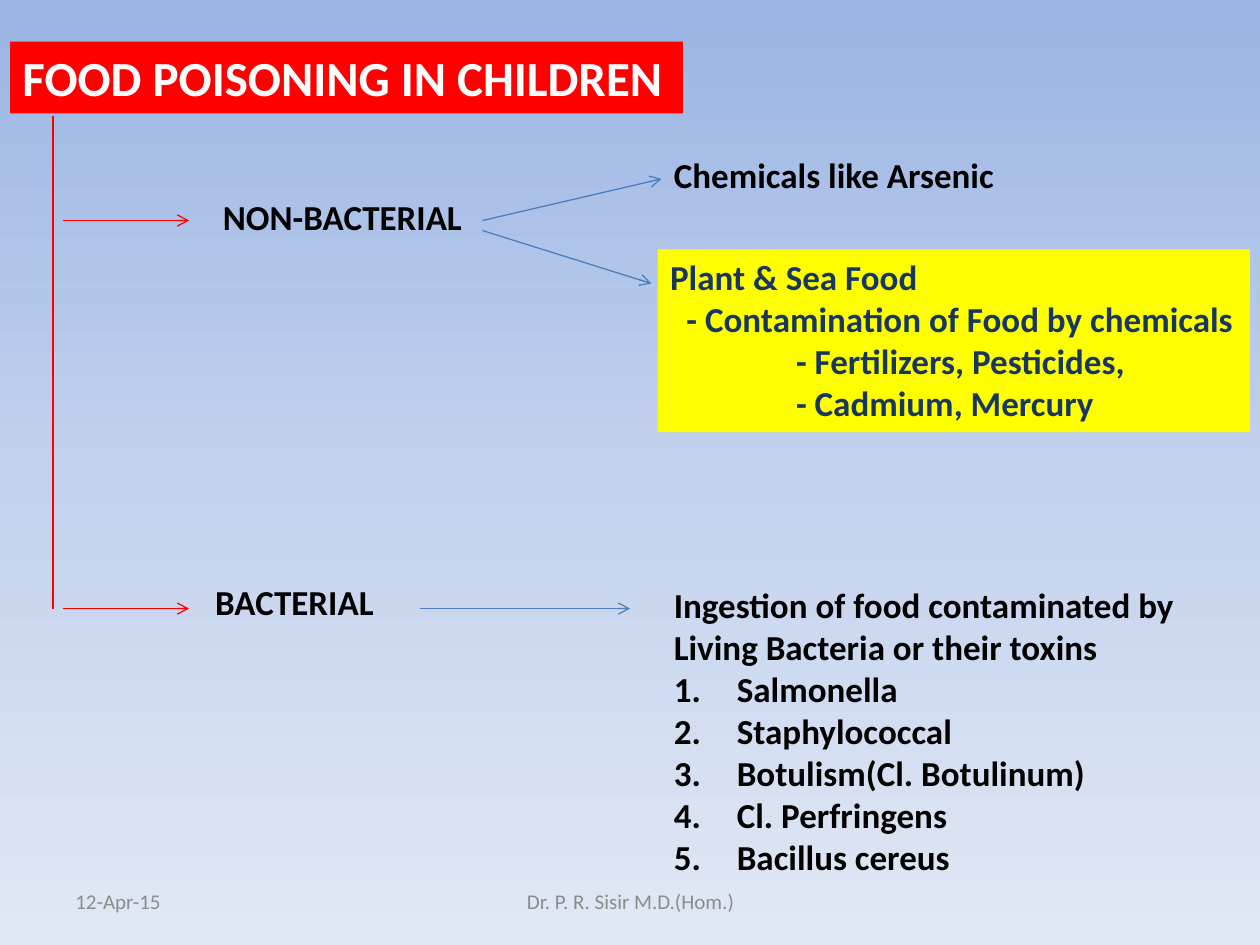
import copy

import pptx
import pptx.dml.color
import pptx.enum.shapes
import pptx.enum.text
import pptx.oxml.ns
import pptx.util
from lxml import etree

Inches, Pt = pptx.util.Inches, pptx.util.Pt
RGBColor = pptx.dml.color.RGBColor
ALIGN = pptx.enum.text.PP_ALIGN
ANCHOR = pptx.enum.text.MSO_ANCHOR
qn = pptx.oxml.ns.qn

RED = RGBColor(0xFF, 0x00, 0x00)
YELLOW = RGBColor(0xFF, 0xFF, 0x00)
WHITE = RGBColor(0xFF, 0xFF, 0xFF)
BLACK = RGBColor(0x00, 0x00, 0x00)
NAVY = RGBColor(0x17, 0x37, 0x5E)
BLUE = RGBColor(0x4B, 0x7E, 0xBC)
GREY = RGBColor(0x8C, 0x8C, 0x8C)
SKY = [(0, RGBColor(0x9A, 0xB5, 0xE4)),
       (0.5, RGBColor(0xC2, 0xD1, 0xED)),
       (1, RGBColor(0xE1, 0xE8, 0xF5))]

# Content: each line is (text, left indent in inches, numbered)
TITLE = [("FOOD POISONING IN CHILDREN", 0, False)]
NON_BACTERIAL = [("NON-BACTERIAL", 0, False)]
BACTERIAL = [("BACTERIAL", 0, False)]
CHEMICALS = [("Chemicals like Arsenic", 0, False)]
PLANT_FOOD = [
    ("Plant & Sea Food", 0, False),
    ("- Contamination of Food by chemicals", 0.13, False),
    ("- Fertilizers, Pesticides,", 1, False),
    ("- Cadmium, Mercury", 1, False),
]
INGESTION = [
    ("Ingestion of food contaminated by", 0, False),
    ("Living Bacteria or their toxins", 0, False),
] + [(germ, 0.5, True) for germ in (
    "Salmonella", "Staphylococcal", "Botulism(Cl. Botulinum)",
    "Cl. Perfringens", "Bacillus cereus")]
DATE = [("12-Apr-15", 0, False)]
AUTHOR = [("Dr. P. R. Sisir M.D.(Hom.)", 0, False)]

# Shared positions, in inches
TRUNK_X, BRANCH_START, BRANCH_END = 0.42, 0.5, 1.5
NON_BACTERIAL_Y, BACTERIAL_Y = 1.75, 4.83
CAUSE_X = 5.25
FOOTER_Y, FOOTER_H = 6.95, 0.4

# (lines, box, size, colour, fill, bold)
LABELS = [
    (TITLE, (0.08, 0.33, 5.34, 0.57), 28, WHITE, RED),
    (NON_BACTERIAL, (1.67, 1.5, 2.12, 0.44), 20, BLACK, None),
    (BACTERIAL, (1.61, 4.56, 1.47, 0.44), 20, BLACK, None),
    (CHEMICALS, (CAUSE_X, 1.17, 2.76, 0.44), 20, BLACK, None),
    (PLANT_FOOD, (5.22, 1.98, 4.7, 1.45), 20, NAVY, YELLOW),
    (INGESTION, (CAUSE_X, 4.58, 4.2, 2.79), 20, BLACK, None),
]
FOOTERS = [
    (DATE, (0.5, FOOTER_Y, 2.33, FOOTER_H), ALIGN.LEFT),
    (AUTHOR, (3.42, FOOTER_Y, 3.17, FOOTER_H), ALIGN.CENTER),
]
# (start, end, colour, has arrowhead)
LINES = [
    ((TRUNK_X, 0.92), (TRUNK_X, BACTERIAL_Y), RED, False),
    ((BRANCH_START, NON_BACTERIAL_Y), (BRANCH_END, NON_BACTERIAL_Y), RED, True),
    ((BRANCH_START, BACTERIAL_Y), (BRANCH_END, BACTERIAL_Y), RED, True),
    ((3.83, 1.83), (5.17, 2.25), BLUE, True),
    ((3.83, NON_BACTERIAL_Y), (CAUSE_X, 1.42), BLUE, True),
    ((3.33, BACTERIAL_Y), (5, BACTERIAL_Y), BLUE, True),
]


def paint_background(slide):
    fill = slide.background.fill
    fill.gradient()
    fill.gradient_angle = 270
    stop_list = slide.background._cSld.find(".//" + qn("a:gsLst"))
    stop_list.append(copy.deepcopy(stop_list[-1]))
    for stop, (position, color) in zip(fill.gradient_stops, SKY):
        stop.position = position
        stop.color.rgb = color


def add_label(slide, lines, box, size, color, fill=None, bold=True,
              align=ALIGN.LEFT, anchor=ANCHOR.TOP, wrap=False):
    label = slide.shapes.add_textbox(*map(Inches, box))
    if fill is not None:
        label.fill.solid()
        label.fill.fore_color.rgb = fill
    frame = label.text_frame
    frame.word_wrap = wrap
    frame.vertical_anchor = anchor
    for index, (text, indent, numbered) in enumerate(lines):
        paragraph = frame.add_paragraph() if index else frame.paragraphs[0]
        paragraph.text = text
        paragraph.alignment = align
        font = paragraph.font
        font.name, font.size, font.bold = "Calibri", Pt(size), bold
        font.color.rgb = color
        properties = paragraph._p.get_or_add_pPr()
        if indent:
            properties.set("marL", str(Inches(indent)))
        if numbered:
            properties.set("indent", str(-Inches(indent)))
            numbering = etree.Element(qn("a:buAutoNum"), type="arabicPeriod")
            properties.find(qn("a:defRPr")).addprevious(numbering)


def add_line(slide, start, end, color, arrow):
    line = slide.shapes.add_connector(
        pptx.enum.shapes.MSO_CONNECTOR.STRAIGHT,
        *map(Inches, start + end))
    line.line.color.rgb = color
    line.line.width = Pt(0.75)
    if arrow:
        etree.SubElement(line.line._get_or_add_ln(), qn("a:tailEnd"), type="arrow")
    etree.SubElement(line._element.spPr, qn("a:effectLst"))


def main():
    deck = pptx.Presentation()
    deck.slide_width, deck.slide_height = Inches(10), Inches(7.5)
    slide = deck.slides.add_slide(deck.slide_layouts[6])
    paint_background(slide)

    # Footer
    for lines, box, align in FOOTERS:
        add_label(slide, lines, box, 12, GREY, bold=False, align=align,
                  anchor=ANCHOR.MIDDLE, wrap=True)
    # Title, branches and causes
    for label in LABELS:
        add_label(slide, *label)
    # Trunk and arrows
    for line in LINES:
        add_line(slide, *line)

    deck.save("out.pptx")


if __name__ == "__main__":
    main()
